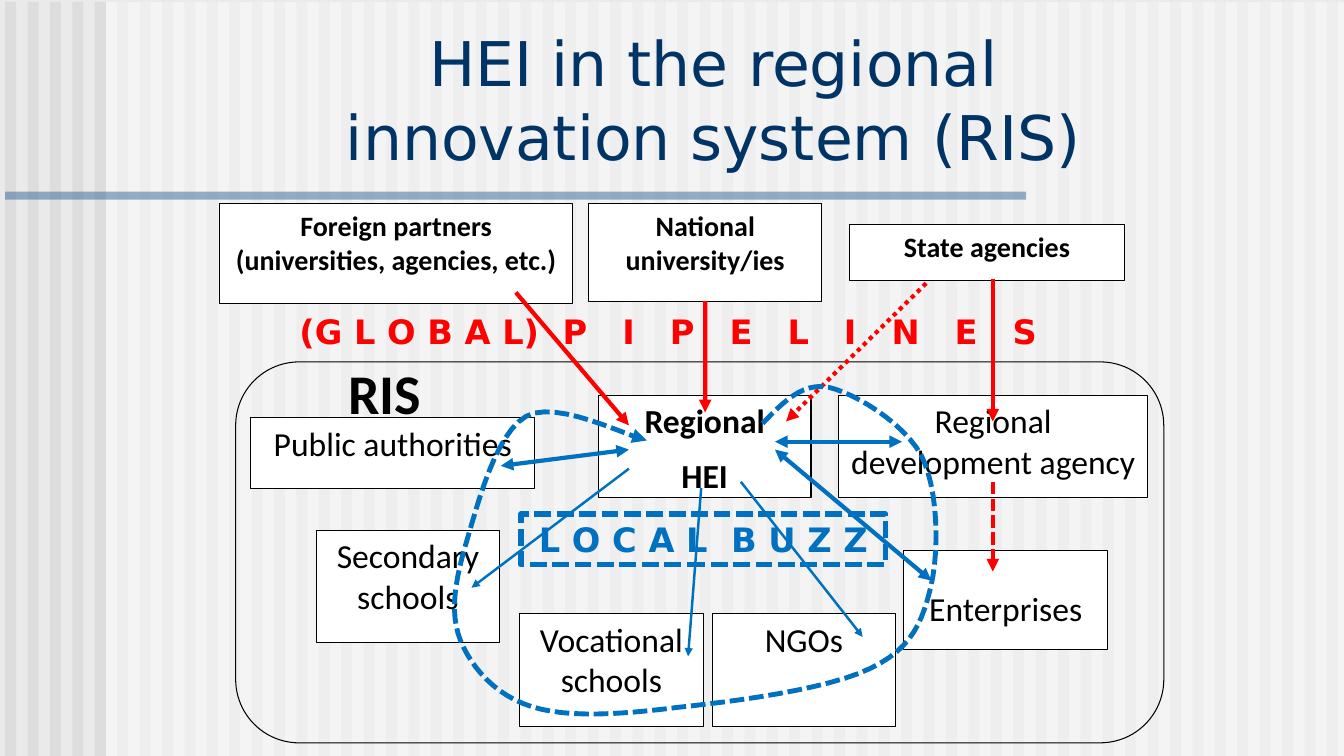
from dataclasses import dataclass

from lxml.etree import SubElement
from pptx import Presentation
from pptx.dml.color import RGBColor
from pptx.enum.dml import MSO_LINE
from pptx.enum.shapes import MSO_CONNECTOR, MSO_SHAPE
from pptx.enum.text import MSO_ANCHOR, PP_ALIGN
from pptx.oxml.ns import qn
from pptx.util import Cm, Pt


@dataclass(frozen=True)
class Theme:
    background: str = "EAEAEA"
    stripe: str = "DDDDDD"
    white: str = "FFFFFF"
    black: str = "000000"
    bar: str = "336699"
    title: str = "003366"
    pipeline: str = "FF0000"
    buzz: str = "0070C0"
    body_font: str = "Calibri"
    display_font: str = "DejaVu Sans"
    title_size: int = 44
    region_size: int = 40
    actor_size: int = 24
    partner_size: int = 20
    outline: float = 0.75
    thin: float = 1.75
    thick: float = 3
    loop: float = 3.5
    frame: float = 4


T = Theme()
WIDTH, HEIGHT = 33.87, 19.05
DASHED, DOTTED = MSO_LINE.SQUARE_DOT, MSO_LINE.ROUND_DOT


def rgb(color):
    return RGBColor.from_string(color)


def set_line(line, color, width, dash=None):
    line.color.rgb = rgb(color)
    line.width = Pt(width)
    if dash:
        line.dash_style = dash


def add_heads(sp, both=False):
    ln = sp.line._get_or_add_ln()
    for end in ("a:headEnd", "a:tailEnd") if both else ("a:tailEnd",):
        SubElement(ln, qn(end), type="triangle")


def add_box(s, box, place, fill=None, alpha=None, line=None, kind=MSO_SHAPE.RECTANGLE):
    """Add a shape at place (x, y, w, h), measured in cm from the corner of box."""
    x, y, w, h = place
    sp = s.shapes.add_shape(kind, Cm(box[0] + x), Cm(box[1] + y), Cm(w), Cm(h))
    sp.shadow.inherit = False
    if fill:
        sp.fill.solid()
        sp.fill.fore_color.rgb = rgb(fill)
        if alpha:
            color = sp.fill._xPr.find(qn("a:solidFill"))[0]
            SubElement(color, qn("a:alpha"), val=str(alpha * 1000))
    else:
        sp.fill.background()
    if line:
        set_line(sp.line, *line)
    else:
        sp.line.fill.background()
    return sp


def format_text(tf, size, color=T.black, font=T.body_font, bold=False, after=0):
    tf.word_wrap = True
    for p in tf.paragraphs:
        p.alignment = PP_ALIGN.CENTER
        p.space_after = Pt(after)
        for r in p.runs:
            r.font.name = font
            r.font.size = Pt(size)
            r.font.bold = bold
            r.font.color.rgb = rgb(color)


def add_spaced_runs(tf, parts):
    """Add (text, letter spacing in points) runs to the first paragraph."""
    for text, spacing in parts:
        r = tf.paragraphs[0].add_run()
        r.text = text
        r.font._element.set("spc", str(round(spacing * 100)))


def add_actor(s, box, place, text, size, bold=False):
    sp = add_box(s, box, place, T.white, line=(T.black, T.outline))
    tf = sp.text_frame
    tf.vertical_anchor = MSO_ANCHOR.TOP
    tf.text = text
    format_text(tf, size, bold=bold, after=10)
    return sp


def add_label(s, box, place):
    x, y, w, h = place
    return s.shapes.add_textbox(Cm(box[0] + x), Cm(box[1] + y), Cm(w), Cm(h)).text_frame


def draw_background(s, box, stripes=60):
    s.background.fill.solid()
    s.background.fill.fore_color.rgb = rgb(T.background)
    w, h = box[2:]
    for i in range(stripes):
        add_box(s, box, (0.13 + i * w / stripes, 0.05, 0.28, h - 0.05), T.stripe)
    add_box(s, box, (2.67, 0.05, w - 2.67, h - 0.05), T.white, alpha=50)


def draw_title(s, box):
    add_box(s, box, (0.13, 4.83, 25.73, 0.2), T.bar, alpha=50)
    tf = add_label(s, box, (6.65, 0.48, 22.68, 4.01))
    tf.vertical_anchor = MSO_ANCHOR.BOTTOM
    tf.text = "HEI in the regional innovation system (RIS)"
    format_text(tf, T.title_size, T.title, T.display_font)


def draw_partners(s, box):
    """Draw the outside partners and return the national universities' box."""
    for place, text in (
        ((0, 0, 8.89, 2.51), "Foreign partners (universities, agencies, etc.)"),
        ((15.88, 0.53, 6.91, 1.4), "State agencies"),
    ):
        add_actor(s, box, place, text, T.partner_size, True)
    tf = add_label(s, box, (0, 2.59, 22.61, 1.3))
    add_spaced_runs(tf, (("(G L O B A L)", 0), (" P I P E L I N E S", 8.35)))
    format_text(tf, T.actor_size, T.pipeline, T.display_font, True)
    return add_actor(s, box, (9.3, 0, 5.87, 2.46), "National university/ies", T.partner_size, True)


def draw_region(s, box):
    add_box(s, box, (0, 0, *box[2:]), line=(T.black, T.outline), kind=MSO_SHAPE.ROUNDED_RECTANGLE)
    add_actor(s, box, (9.14, 0.84, 5.36, 2.59), "Regional\nHEI", T.actor_size, True)
    for place, text in (
        ((15.19, 0.84, 7.8, 2.59), "Regional development agency"),
        ((0.38, 1.4, 7.16, 1.8), "Public authorities"),
        ((2.03, 4.24, 4.62, 2.84), "Secondary schools"),
        ((7.16, 6.35, 4.62, 2.84), "Vocational schools"),
        ((12.01, 6.35, 4.62, 2.84), "NGOs"),
    ):
        add_actor(s, box, place, text, T.actor_size)
    enterprises = add_actor(s, box, (16.84, 4.75, 5.13, 2.51), "Enterprises", T.actor_size)
    enterprises.text_frame.margin_top = Cm(0.95)

    tf = add_label(s, box, (0.18, -0.2, 7.14, 1.19))
    tf.text = "RIS"
    format_text(tf, T.region_size, bold=True, after=10)

    frame = add_box(s, box, (7.19, 3.84, 9.19, 1.27), line=(T.buzz, T.frame, DASHED))
    add_spaced_runs(frame.text_frame, (("L O C A L", 0), (" ", 8.35), ("B U Z Z", 0)))
    format_text(frame.text_frame, T.actor_size, T.buzz, T.display_font, True)


def add_arrow(s, box, start, end, color, width, dash=None, both=False):
    x, y = box[:2]
    c = s.shapes.add_connector(MSO_CONNECTOR.STRAIGHT, Cm(x + start[0]), Cm(y + start[1]),
                               Cm(x + end[0]), Cm(y + end[1]))
    SubElement(c._element.spPr, qn("a:effectLst"))
    set_line(c.line, color, width, dash)
    add_heads(c, both)
    return c


def draw_flows(s, box, national):
    for start, end, dash in (
        ((7.06, -1.75), (9.91, 1.6), None),
        ((17.4, -1.98), (13.87, 1.5), DOTTED),
        ((19.08, -2.08), (19.08, 1.5), None),
        ((19.08, 3.02), (19.08, 5.28), DASHED),
    ):
        add_arrow(s, box, start, end, T.pipeline, T.thick, dash)
    c = add_arrow(s, box, (11.83, -1.53), (11.83, 1.27), T.pipeline, T.thick)
    c.begin_connect(national, 2)
    for start, end, both in (
        ((11.73, 3.18), (11.4, 7.42), False),
        ((12.73, 3.02), (15.8, 6.93), False),
        ((9.91, 2.69), (5.94, 5.69), False),
        ((13.59, 2.21), (17.53, 5.51), True),
        ((13.59, 2.01), (16.79, 2.01), True),
        ((9.91, 2.21), (6.68, 2.62), True),
    ):
        add_arrow(s, box, start, end, T.buzz, T.thick if both else T.thin, both=both)


def bezier(a, b, c, d, t):
    u = 1 - t
    return tuple(u**3 * i + 3 * u * u * t * j + 3 * u * t * t * k + t**3 * m
                 for i, j, k, m in zip(a, b, c, d))


def draw_buzz_loop(s, box, steps=12):
    knots = (
        (13.28, 1.55), (13.77, 1.04), (14.27, 0.51), (14.94, 0.64),
        (15.6, 0.79), (16.81, 1.52), (17.27, 2.34), (17.7, 3.18), (17.73, 4.7), (17.53, 5.61),
        (17.32, 6.5), (17.07, 7.21), (16, 7.72), (14.91, 8.26), (12.52, 8.56), (11.1, 8.71),
        (9.68, 8.89), (8.36, 8.97), (7.47, 8.69), (6.55, 8.41), (5.94, 7.7), (5.66, 7.01),
        (5.38, 6.3), (5.54, 5.46), (5.82, 4.52), (6.1, 3.58), (6.55, 1.8), (7.32, 1.37),
        (8.08, 0.94), (9.88, 1.88), (10.36, 1.98),
    )
    points = [knots[0]] + [bezier(*knots[i:i + 4], n / steps)
                           for i in range(0, len(knots) - 1, 3) for n in range(1, steps + 1)]
    points = [(Cm(box[0] + x), Cm(box[1] + y)) for x, y in points]
    fb = s.shapes.build_freeform(*points[0])
    fb.add_line_segments(points[1:], close=False)
    sp = fb.convert_to_shape()
    sp.shadow.inherit = False
    sp.fill.background()
    set_line(sp.line, T.buzz, T.loop, DASHED)
    add_heads(sp)


def main():
    prs = Presentation()
    prs.slide_width, prs.slide_height = Cm(WIDTH), Cm(HEIGHT)
    s = prs.slides.add_slide(prs.slide_layouts[6])
    page = (0, 0, WIDTH, HEIGHT)
    region = (5.94, 9.12, 23.39, 9.6)
    draw_background(s, page)
    draw_title(s, page)
    national = draw_partners(s, (5.54, 5.13, 22.79, 3.89))
    draw_region(s, region)
    draw_flows(s, region, national)
    draw_buzz_loop(s, region)
    prs.save("out.pptx")


if __name__ == "__main__":
    main()
